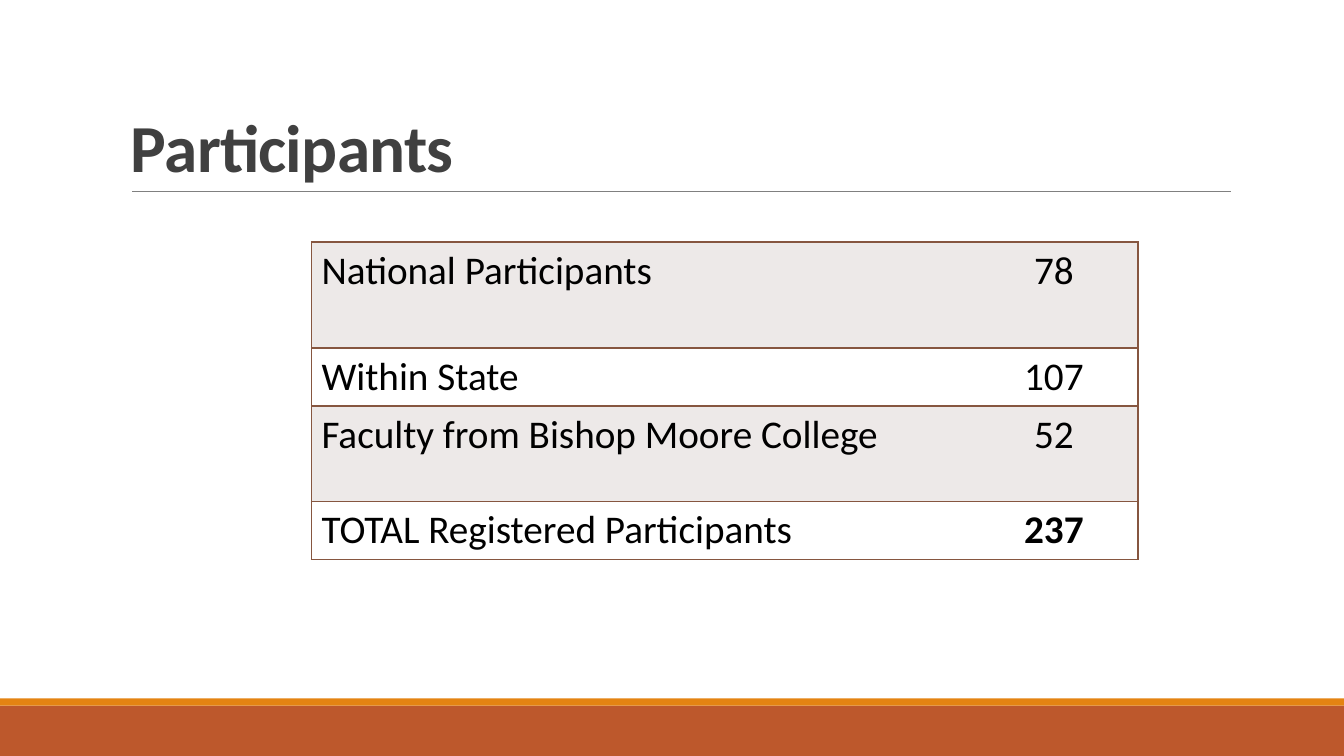
from dataclasses import dataclass

from lxml.etree import SubElement
from pptx import Presentation
from pptx.dml.color import RGBColor
from pptx.enum.shapes import MSO_CONNECTOR, MSO_SHAPE
from pptx.enum.text import MSO_ANCHOR, PP_ALIGN
from pptx.oxml.ns import qn
from pptx.util import Cm, Pt

COLORS = {
    "footer": "BD582C",
    "accent": "E48312",
    "rule": "808080",
    "title": "404040",
    "text": "000000",
    "border": "865640",
    "band": "EDE9E8",
    "plain": "FFFFFF",
}
FONT = "Calibri"
SLIDE_WIDTH, SLIDE_HEIGHT = 33.87, 19.05
COLUMN_WIDTHS = (16.59, 4.24)


@dataclass(frozen=True)
class Bar:
    top: float
    height: float
    color: str


@dataclass(frozen=True)
class ParticipantRow:
    label: str
    count: str
    height: float
    bold_count: bool = False


BARS = (Bar(17.78, 1.27, "footer"), Bar(17.6, 0.18, "accent"))
PARTICIPANT_ROWS = (
    ParticipantRow("National Participants", "78", 2.67),
    ParticipantRow("Within State", "107", 1.46),
    ParticipantRow("Faculty from Bishop Moore College", "52", 2.4),
    ParticipantRow("TOTAL Registered Participants", "237", 1.46, bold_count=True),
)


def rgb(name: str) -> RGBColor:
    return RGBColor.from_string(COLORS[name])


def style_text(paragraph, size: float, color: str, bold: bool = False) -> None:
    for run in paragraph.runs:
        run.font.name = FONT
        run.font.size = Pt(size)
        run.font.bold = bold
        run.font.color.rgb = rgb(color)


def draw_bar(slide, bar: Bar) -> None:
    shape = slide.shapes.add_shape(
        MSO_SHAPE.RECTANGLE, 0, Cm(bar.top), Cm(SLIDE_WIDTH), Cm(bar.height))
    shape.shadow.inherit = False
    shape.fill.solid()
    shape.fill.fore_color.rgb = rgb(bar.color)
    shape.line.fill.background()


def draw_title_rule(slide) -> None:
    rule = slide.shapes.add_connector(
        MSO_CONNECTOR.STRAIGHT, Cm(3.33), Cm(4.82), Cm(31.01), Cm(4.82))
    rule.line.color.rgb = rgb("rule")
    rule.line.width = Pt(0.5)
    SubElement(rule._element.spPr, qn("a:effectLst"))


def draw_title(slide, title: str) -> None:
    frame = slide.shapes.add_textbox(Cm(3.05), Cm(0.79), Cm(27.94), Cm(4.03)).text_frame
    frame.word_wrap = True
    frame.vertical_anchor = MSO_ANCHOR.BOTTOM
    frame.text = title
    paragraph = frame.paragraphs[0]
    paragraph.line_spacing = 0.85
    style_text(paragraph, 48, "title", bold=True)
    paragraph.runs[0].font._element.set("spc", "-50")


def set_borders(cell, visible_sides: str) -> None:
    """Line the given sides (letters of LRTB) and clear the others."""
    properties = cell._tc.get_or_add_tcPr()
    for side in "LRTB":
        line = SubElement(properties, qn(f"a:ln{side}"), w=str(Pt(1)))
        if side in visible_sides:
            fill = SubElement(line, qn("a:solidFill"))
            SubElement(fill, qn("a:srgbClr"), val=COLORS["border"])
        else:
            SubElement(line, qn("a:noFill"))


def draw_participants(slide, rows: tuple[ParticipantRow, ...]) -> None:
    table = slide.shapes.add_table(
        len(rows), len(COLUMN_WIDTHS), Cm(7.85), Cm(6.1),
        Cm(sum(COLUMN_WIDTHS)), Cm(sum(row.height for row in rows))).table
    table.first_row = False
    table.horz_banding = False
    for column, width in zip(table.columns, COLUMN_WIDTHS):
        column.width = Cm(width)
    for index, row in enumerate(rows):
        table.rows[index].height = Cm(row.height)
        label_cell, count_cell = table.rows[index].cells
        for cell, text, sides, align, bold in (
            (label_cell, row.label, "LTB", PP_ALIGN.LEFT, False),
            (count_cell, row.count, "RTB", PP_ALIGN.CENTER, row.bold_count),
        ):
            set_borders(cell, sides)
            cell.fill.solid()
            cell.fill.fore_color.rgb = rgb("plain" if index % 2 else "band")
            cell.text_frame.text = text
            paragraph = cell.text_frame.paragraphs[0]
            paragraph.alignment = align
            style_text(paragraph, 28, "text", bold)


def main() -> None:
    deck = Presentation()
    deck.slide_width, deck.slide_height = Cm(SLIDE_WIDTH), Cm(SLIDE_HEIGHT)
    slide = deck.slides.add_slide(deck.slide_layouts[6])
    for bar in BARS:
        draw_bar(slide, bar)
    draw_title_rule(slide)
    draw_title(slide, "Participants")
    draw_participants(slide, PARTICIPANT_ROWS)
    deck.save("out.pptx")


if __name__ == "__main__":
    main()
